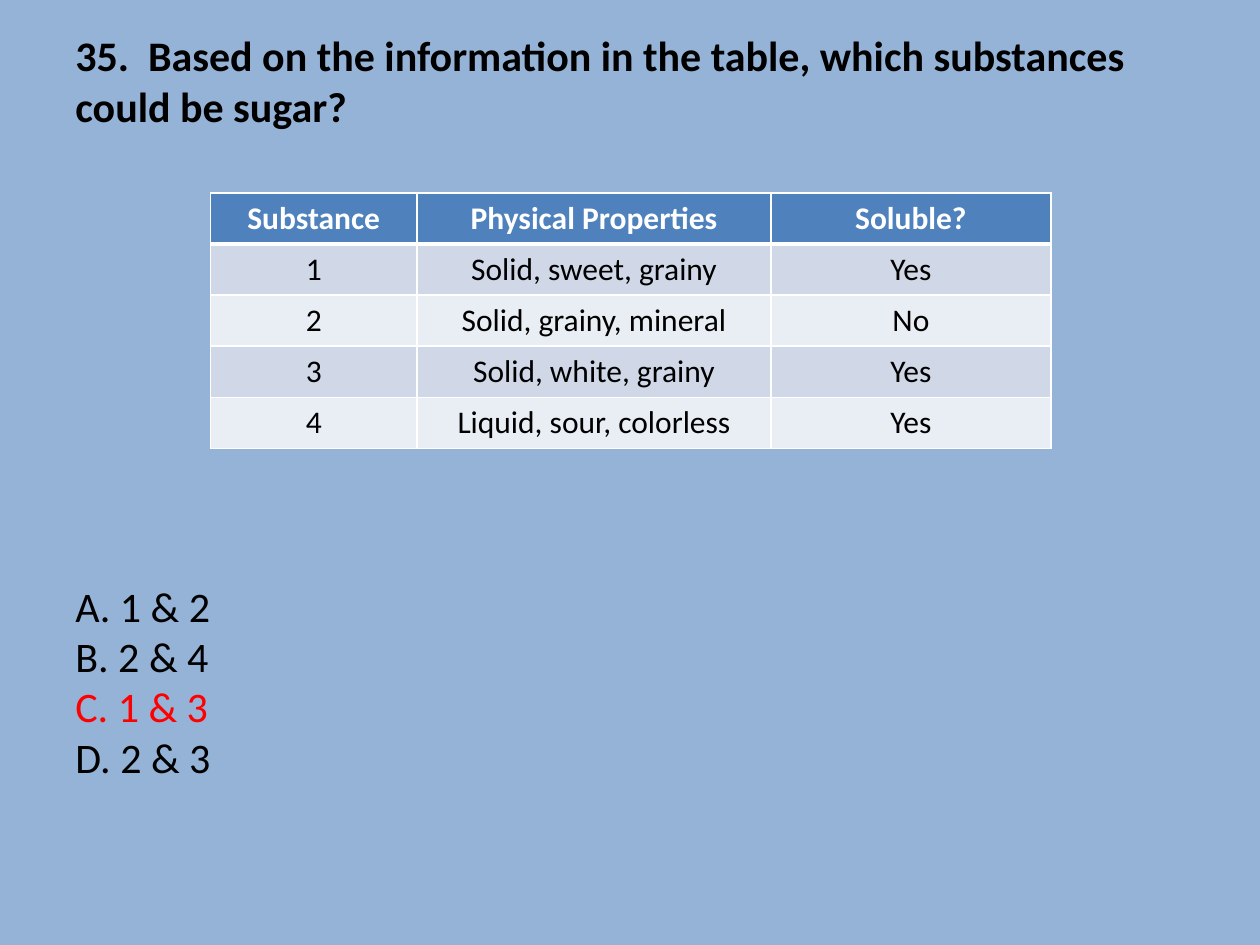
from lxml.etree import SubElement as Sub
from pptx import Presentation
from pptx.dml.color import RGBColor as RGB
from pptx.enum.text import MSO_ANCHOR as Anchor, PP_ALIGN as Align
from pptx.oxml.ns import qn
from pptx.util import Inches, Pt


def paint(fill, color):
    fill.solid()
    fill.fore_color.rgb = RGB.from_string(color)


class Quiz:
    face = "Calibri"
    ink, white, red = "000000", "FFFFFF", "FF0000"
    back, head = "95B3D7", "4F81BD"
    bands = ("D0D8E8", "E9EDF4")

    def __init__(self, deck):
        self.slide = deck.slides.add_slide(deck.slide_layouts[6])
        paint(self.slide.background.fill, self.back)

    def style(self, par, size, color, bold=False):
        for run in par.runs:
            run.font.name = self.face
            run.font.size = Pt(size)
            run.font.bold = bold
            paint(run.font.fill, color)

    def ask(self, box, title, picks, right, gap):
        frame = self.slide.shapes.add_textbox(*map(Inches, box)).text_frame
        frame.word_wrap = True
        frame.vertical_anchor = Anchor.MIDDLE
        frame.text = "\n".join([title, *picks])
        first, *rest = frame.paragraphs
        self.style(first, 24, self.ink, True)
        rest[0].space_before = Pt(gap)
        for par in rest:
            self.style(par, 24, self.red if par.text == right else self.ink)

    def edge(self, cell, side, width):
        line = Sub(cell._tc.get_or_add_tcPr(), qn("a:ln" + side), w=str(Pt(width)))
        fill = Sub(line, qn("a:solidFill"))
        Sub(fill, qn("a:srgbClr"), val=self.white)

    def table(self, left, top, widths, height, rows):
        wide, tall = Inches(sum(widths)), Inches(height)
        grid = self.slide.shapes.add_table(
            len(rows), len(widths), Inches(left), Inches(top), wide, tall).table
        for col, width in zip(grid.columns, widths):
            col.width = Inches(width)
        for r, row in enumerate(rows):
            grid.rows[r].height = tall // len(rows)
            for c, text in enumerate(row):
                self.cell(grid.cell(r, c), text, r)

    def cell(self, cell, text, r):
        top = r == 0
        cell.text = text
        par = cell.text_frame.paragraphs[0]
        par.alignment = Align.CENTER
        self.style(par, 18, self.white if top else self.ink, top)
        # The rule below the header is thicker
        for side, width in (("L", 1), ("R", 1), ("T", 3 if r == 1 else 1),
                            ("B", 3 if top else 1)):
            self.edge(cell, side, width)
        paint(cell.fill, self.head if top else self.bands[(r - 1) % 2])


def main():
    deck = Presentation()
    deck.slide_width, deck.slide_height = Inches(10), Inches(7.5)
    quiz = Quiz(deck)

    # Question and answers
    quiz.ask(
        (0.5, 0.3, 9, 5.84),
        "35.  Based on the information in the table, which substances could be sugar?",
        ["A. 1 & 2", "B. 2 & 4", "C. 1 & 3", "D. 2 & 3"],
        right="C. 1 & 3", gap=257)

    # Table of substances
    quiz.table(1.67, 1.53, (1.64, 2.81, 2.22), 2.03, [
        ("Substance", "Physical Properties", "Soluble?"),
        ("1", "Solid, sweet, grainy", "Yes"),
        ("2", "Solid, grainy, mineral", "No"),
        ("3", "Solid, white, grainy", "Yes"),
        ("4", "Liquid, sour, colorless", "Yes"),
    ])
    deck.save("out.pptx")


if __name__ == "__main__":
    main()
